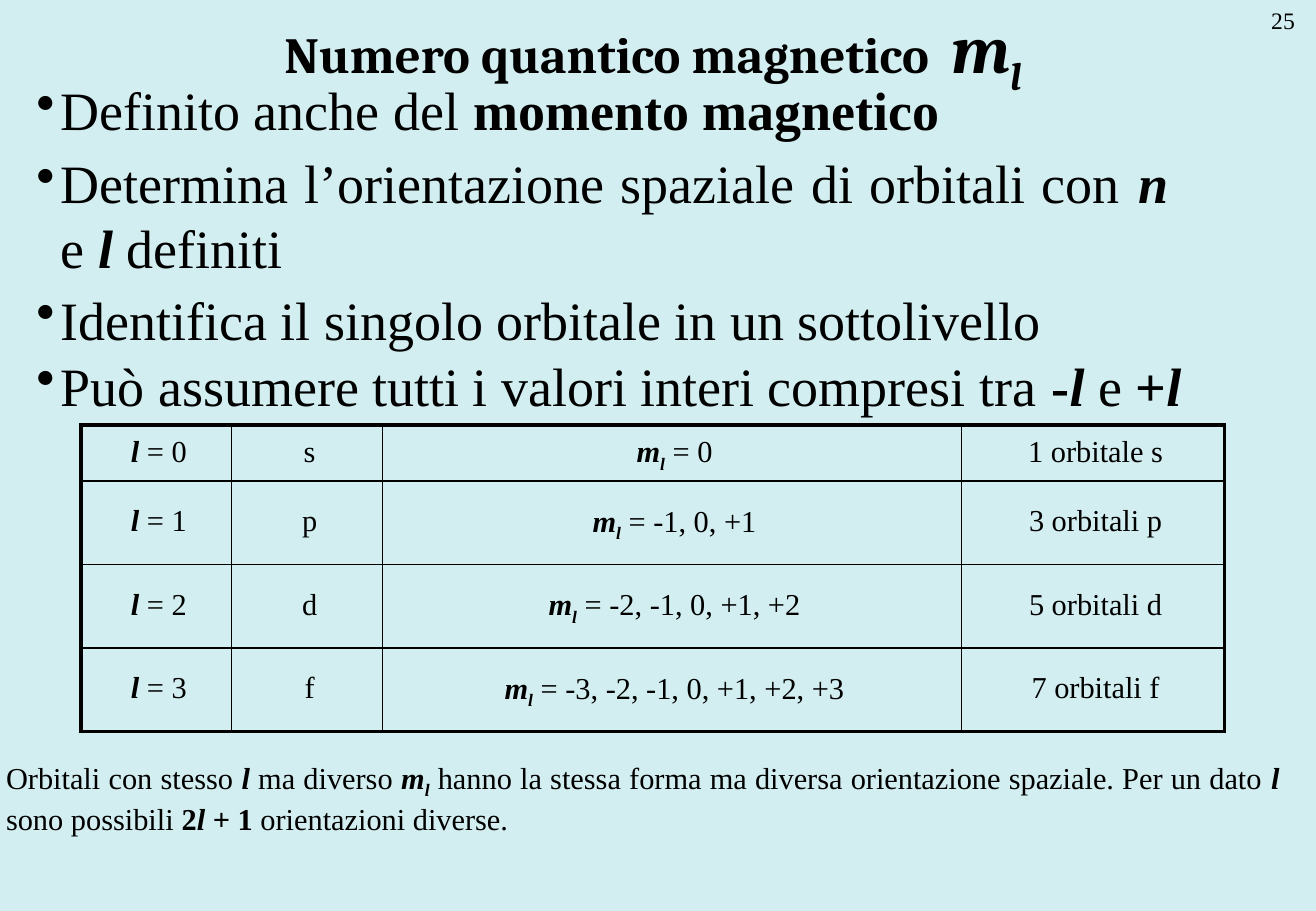
import dataclasses

import lxml.etree
import pptx
import pptx.dml.color
import pptx.enum.text
import pptx.oxml.ns
import pptx.util

ALIGN = pptx.enum.text.PP_ALIGN
ANCHOR = pptx.enum.text.MSO_ANCHOR
qn = pptx.oxml.ns.qn


@dataclasses.dataclass(frozen=True)
class Theme:
    """Colours, fonts, type sizes and line widths."""
    background: str = "D3EEF0"
    ink: str = "000000"
    heading_font: str = "Cambria"
    body_font: str = "Times New Roman"
    heading: int = 30
    symbol: int = 40
    bullet: int = 32
    body: int = 18
    number: int = 14
    frame: float = 2.25
    rule: float = 1
    inset: float = 0.05


class Lesson:
    """A slide on a grid of twelve columns and rows to the inch."""

    def __init__(self, theme, columns, rows):
        self.theme = theme
        self.deck = pptx.Presentation()
        self.deck.slide_width = self.units(columns)
        self.deck.slide_height = self.units(rows)
        self.slide = self.deck.slides.add_slide(self.deck.slide_layouts[5])
        fill = self.slide.background.fill
        fill.solid()
        fill.fore_color.rgb = self.colour(theme.background)

    def units(self, count):
        """Turn grid units into a length."""
        return pptx.util.Inches(count / 12)

    def colour(self, code):
        """Turn a hex code into a colour."""
        return pptx.dml.color.RGBColor.from_string(code)

    def typeset(self, paragraph, runs, size, align, font=None, bold=False):
        """Fill a paragraph; style letters are b, i and s for subscript."""
        paragraph.alignment = align
        paragraph.font.name = font or self.theme.body_font
        paragraph.font.size = pptx.util.Pt(size)
        paragraph.font.bold = bold
        paragraph.font.color.rgb = self.colour(self.theme.ink)
        for text, style in runs:
            run = paragraph.add_run()
            run.text = text
            if "b" in style:
                run.font.bold = True
            if "i" in style:
                run.font.italic = True
            if "s" in style:
                run._r.get_or_add_rPr().set("baseline", "-25000")

    def frame(self, shape, wrap=True):
        """Prepare the text frame of a shape."""
        frame = shape.text_frame
        frame.word_wrap = wrap
        frame.auto_size = pptx.enum.text.MSO_AUTO_SIZE.NONE
        frame.vertical_anchor = ANCHOR.TOP
        inset = pptx.util.Inches(self.theme.inset)
        frame.margin_left = frame.margin_right = inset
        frame.margin_top = frame.margin_bottom = inset
        return frame

    def title(self, box, runs):
        """Place the title, with its symbol larger than its words."""
        heading = self.slide.shapes.title
        heading.left, heading.top, heading.width, heading.height = map(self.units, box)
        paragraph = self.frame(heading).paragraphs[0]
        self.typeset(paragraph, runs, self.theme.heading, ALIGN.CENTER,
                     self.theme.heading_font, bold=True)
        for symbol in paragraph.runs[1:]:
            symbol.font.size = pptx.util.Pt(self.theme.symbol)

    def text(self, box, runs, size, align=ALIGN.JUSTIFY, wrap=True, bullet=False):
        """Place a text box, with a bullet if asked."""
        area = self.slide.shapes.add_textbox(*map(self.units, box))
        paragraph = self.frame(area, wrap).paragraphs[0]
        if bullet:
            indent = pptx.util.Inches(0.2)
            properties = paragraph._p.get_or_add_pPr()
            properties.set("marL", str(indent))
            properties.set("indent", str(-indent))
            lxml.etree.SubElement(properties, qn("a:buChar"), char="•")
        self.typeset(paragraph, runs, size, align)

    def borders(self, cell, widths):
        """Draw the left, right, top and bottom borders of a cell."""
        properties = cell._tc.get_or_add_tcPr()
        for place, (side, width) in enumerate(zip("LRTB", widths)):
            line = lxml.etree.SubElement(properties, qn(f"a:ln{side}"),
                                         w=str(pptx.util.Pt(width)))
            fill = lxml.etree.SubElement(line, qn("a:solidFill"))
            lxml.etree.SubElement(fill, qn("a:srgbClr"), val=self.theme.ink)
            properties.insert(place, line)

    def table(self, left, top, widths, heights, content):
        """Place a ruled table with a heavier outer frame."""
        box = map(self.units, (left, top, sum(widths), sum(heights)))
        grid = self.slide.shapes.add_table(len(heights), len(widths), *box).table
        grid.first_row = grid.horz_banding = False
        for column, width in zip(grid.columns, widths):
            column.width = self.units(width)
        for row, height in zip(grid.rows, heights):
            row.height = self.units(height)
        inset = pptx.util.Inches(self.theme.inset)
        for y, entries in enumerate(content):
            for x, runs in enumerate(entries):
                cell = grid.cell(y, x)
                cell.fill.background()
                cell.vertical_anchor = ANCHOR.MIDDLE
                cell.margin_left = cell.margin_right = inset
                cell.margin_top = cell.margin_bottom = inset
                paragraph = cell.text_frame.paragraphs[0]
                paragraph.line_spacing = 0.9
                paragraph.space_before = pptx.util.Pt(4)
                paragraph._p.get_or_add_pPr().set("marL", str(pptx.util.Inches(0.04)))
                self.typeset(paragraph, runs, self.theme.body, ALIGN.CENTER)
                outer = (x == 0, x == len(widths) - 1, y == 0, y == len(heights) - 1)
                self.borders(cell, [self.theme.frame if edge else self.theme.rule
                                    for edge in outer])


def orbital_row(l, letter):
    """Give the table row of one sublevel."""
    values = ", ".join(f"{m:+d}" if m else "0" for m in range(-l, l + 1))
    noun = "orbitali" if l else "orbitale"
    return [
        [("l", "bi"), (f" = {l}", "")],
        [(letter, "")],
        [("m", "bi"), ("l", "bis"), (f" = {values}", "")],
        [(f"{2 * l + 1} {noun} {letter}", "")],
    ]


def main():
    """Build and save the slide."""
    theme = Theme()
    lesson = Lesson(theme, 130, 90)
    lesson.text((125.5, 0, 2.5, 3.7), [("25", "")], theme.number, ALIGN.CENTER, wrap=False)
    lesson.title((6, 0, 117, 10),
                 [("Numero quantico magnetico  ", ""), ("m", "i"), ("l", "is")])
    statements = [
        (7, 124, 7.2, [("Definito anche del ", ""), ("momento magnetico", "b")]),
        (14.2, 113, 13.3, [("Determina l’orientazione spaziale di orbitali con ", ""),
                           ("n", "bi"), (" e ", ""), ("l", "bi"), (" definiti", "")]),
        (27.7, 113, 7.2, [("Identifica il singolo orbitale in un sottolivello", "")]),
        (34.2, 124, 7.2, [("Può assumere tutti i valori interi compresi tra ", ""),
                          ("-", "b"), ("l ", "bi"), ("e", ""), (" +", "b"), ("l", "bi")]),
    ]
    for top, width, height, runs in statements:
        lesson.text((3, top, width, height), runs, theme.bullet, bullet=True)
    lesson.table(8, 42, [14.9, 14.9, 57.2, 26], [5.5] + [8.25] * 3,
                 [orbital_row(l, letter) for l, letter in enumerate("spdf")])
    lesson.text((0, 74.4, 127, 8.6), [
        ("Orbitali con stesso ", ""), ("l", "bi"), (" ma diverso ", ""),
        ("m", "bi"), ("l", "bis"),
        (" hanno la stessa forma ma diversa orientazione spaziale. Per un dato ", ""),
        ("l", "bi"), (" sono possibili ", ""), ("2", "b"), ("l ", "bi"), ("+ 1", "b"),
        (" orientazioni diverse.", ""),
    ], theme.body)
    lesson.deck.save("out.pptx")


if __name__ == "__main__":
    main()
